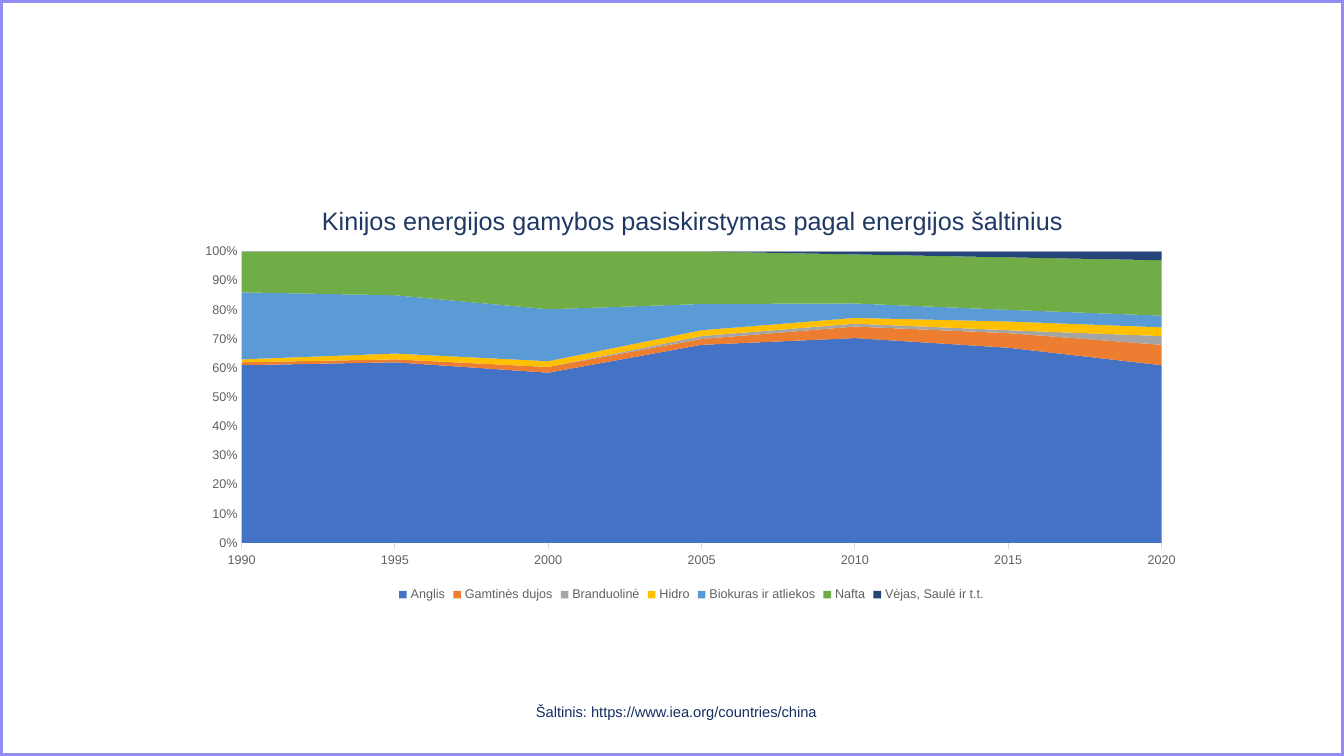
from dataclasses import dataclass

from lxml.etree import SubElement
from pptx import Presentation
from pptx.chart.data import CategoryChartData
from pptx.dml.color import RGBColor
from pptx.enum.chart import XL_CHART_TYPE, XL_LEGEND_POSITION, XL_TICK_MARK
from pptx.enum.shapes import MSO_SHAPE
from pptx.enum.text import MSO_AUTO_SIZE
from pptx.oxml import parse_xml
from pptx.oxml.ns import nsdecls, qn
from pptx.util import Emu, Pt

PIXEL = 914400 / 100.8


@dataclass(frozen=True)
class Theme:
    font: str = "Arial"
    frame: str = "928DF2"
    title: str = "203864"
    label: str = "616161"
    rule: str = "DBDBDB"
    chart_text: str = "0C0C0C"
    source: str = "172E62"
    title_size: float = 18
    chart_size: float = 10
    label_size: float = 9
    source_size: float = 10.5
    frame_width: float = 4
    rule_width: float = 0.75


YEARS = ["1990", "1995", "2000", "2005", "2010", "2015", "2020"]
ENERGY_SOURCES = [
    ("Anglis", "4472C4", [61, 62, 59, 68, 71, 67, 61]),
    ("Gamtinės dujos", "ED7D31", [1, 1, 2, 2, 4, 5, 7]),
    ("Branduolinė", "A5A5A5", [None, 0, 0, 1, 1, 1, 3]),
    ("Hidro", "FFC000", [1, 2, 2, 2, 2, 3, 3]),
    ("Biokuras ir atliekos", "5B9BD5", [23, 20, 18, 9, 5, 4, 4]),
    ("Nafta", "70AD47", [14, 15, 20, 18, 17, 18, 19]),
    ("Vėjas, Saulė ir t.t.", "264478", [0, 0, 0, 0, 1, 2, 3]),
]


def px(length):
    return Emu(round(length * PIXEL))


class SlideBuilder:
    def __init__(self, slide, theme):
        self.slide = slide
        self.theme = theme

    def style_font(self, font, size, color):
        font.name = self.theme.font
        font.size = Pt(size)
        font.bold = False
        font.color.rgb = RGBColor.from_string(color)

    def style_line(self, line, width, color):
        line.width = Pt(width)
        line.color.rgb = RGBColor.from_string(color)

    def place(self, element, index, **position):
        for old_layout in element.findall(qn("c:layout")):
            element.remove(old_layout)
        layout = parse_xml(f"<c:layout {nsdecls('c')}/>")
        manual = SubElement(layout, qn("c:manualLayout"))
        if "w" in position:
            SubElement(manual, qn("c:layoutTarget")).set("val", "inner")
        for tag in ("xMode", "yMode"):
            SubElement(manual, qn(f"c:{tag}")).set("val", "edge")
        for tag, value in position.items():
            SubElement(manual, qn(f"c:{tag}")).set("val", str(value))
        element.insert(index, layout)

    def frame(self, width, height):
        box = self.slide.shapes.add_shape(MSO_SHAPE.RECTANGLE, 0, 0, width, height)
        box.shadow.inherit = False
        box.fill.background()
        self.style_line(box.line, self.theme.frame_width, self.theme.frame)

    def area_chart(self, title, categories, series_rows, left, top, width, height):
        theme = self.theme
        data = CategoryChartData(number_format="0")
        data.categories = categories
        for name, _, values in series_rows:
            data.add_series(name, values)
        chart = self.slide.shapes.add_chart(
            XL_CHART_TYPE.AREA_STACKED_100, px(left), px(top), px(width), px(height), data
        ).chart
        self.style_font(chart.font, theme.chart_size, theme.chart_text)
        for series, (_, color, _) in zip(chart.plots[0].series, series_rows):
            series.format.fill.solid()
            series.format.fill.fore_color.rgb = RGBColor.from_string(color)
            series.format.line.fill.background()

        chart.has_title = True
        para = chart.chart_title.text_frame.paragraphs[0]
        para.text = title
        self.style_font(para.runs[0].font, theme.title_size, theme.title)
        chart.chart_title.include_in_layout = False
        self.place(chart.chart_title._element, 1, x=0.13, y=0.05)

        for axis in (chart.category_axis, chart.value_axis):
            self.style_font(axis.tick_labels.font, theme.label_size, theme.label)
            axis.minor_tick_mark = XL_TICK_MARK.NONE
        chart.category_axis.major_tick_mark = XL_TICK_MARK.OUTSIDE
        chart.category_axis.has_major_gridlines = False
        self.style_line(chart.category_axis.format.line, theme.rule_width, theme.rule)

        value_axis = chart.value_axis
        value_axis.minimum_scale = 0
        value_axis.maximum_scale = 1
        value_axis.major_unit = 0.1
        value_axis.major_tick_mark = XL_TICK_MARK.NONE
        value_axis.tick_labels.number_format = "0%"
        value_axis.tick_labels.number_format_is_linked = False
        value_axis.format.line.fill.background()
        value_axis.has_major_gridlines = True
        self.style_line(value_axis.major_gridlines.format.line, theme.rule_width, theme.rule)
        value_axis._element.find(qn("c:crossBetween")).set("val", "midCat")
        plot_area = value_axis._element.getparent()
        self.place(plot_area, 0, x=0.055, y=0.172, w=0.91, h=0.681)

        chart.has_legend = True
        chart.legend.position = XL_LEGEND_POSITION.BOTTOM
        chart.legend.include_in_layout = False
        self.style_font(chart.legend.font, theme.label_size, theme.label)

    def source_note(self, text, left, top, width, height):
        box = self.slide.shapes.add_textbox(px(left), px(top), px(width), px(height))
        text_frame = box.text_frame
        text_frame.word_wrap = True
        text_frame.auto_size = MSO_AUTO_SIZE.SHAPE_TO_FIT_TEXT
        for side in ("left", "top", "right", "bottom"):
            setattr(text_frame, f"margin_{side}", px(10))
        text_frame.text = text
        para = text_frame.paragraphs[0]
        para.line_spacing = 1.15
        self.style_font(para.runs[0].font, self.theme.source_size, self.theme.source)


def main():
    deck = Presentation()
    deck.slide_width, deck.slide_height = px(1344), px(756)
    page = SlideBuilder(deck.slides.add_slide(deck.slide_layouts[6]), Theme())
    page.frame(deck.slide_width, deck.slide_height)
    page.area_chart(
        "Kinijos energijos gamybos pasiskirstymas pagal energijos šaltinius",
        YEARS, ENERGY_SOURCES, 186, 178, 1011, 428,
    )
    page.source_note("Šaltinis: https://www.iea.org/countries/china", 526, 690, 331, 38)
    deck.save("out.pptx")


if __name__ == "__main__":
    main()
